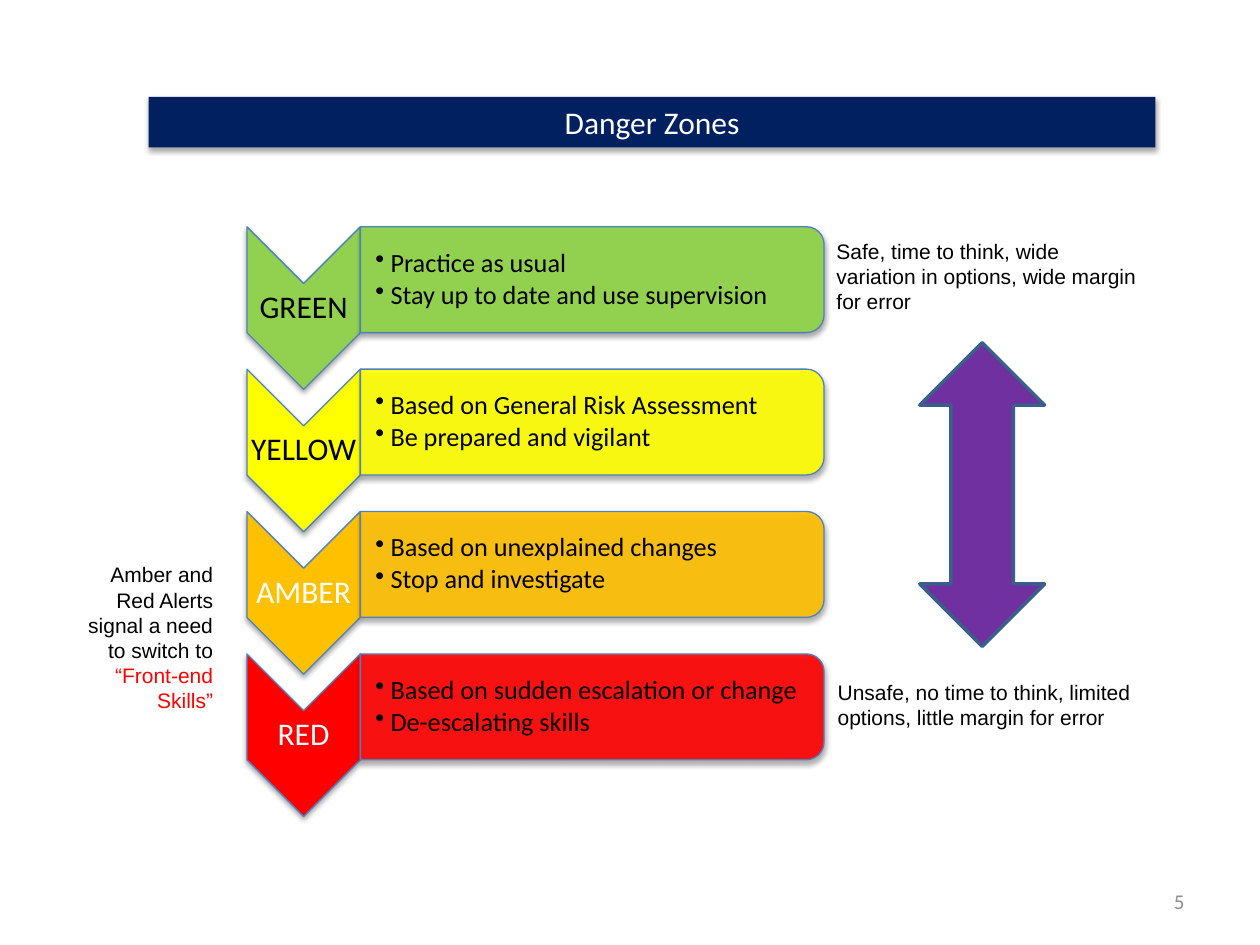
from lxml import etree
from pptx import Presentation
from pptx.dml.color import RGBColor
from pptx.enum.shapes import MSO_SHAPE
from pptx.enum.text import MSO_ANCHOR, PP_ALIGN
from pptx.oxml.ns import qn
from pptx.util import Inches, Pt

RECT, CHEVRON = MSO_SHAPE.RECTANGLE, MSO_SHAPE.CHEVRON
PANEL, ARROW = MSO_SHAPE.ROUND_2_SAME_RECTANGLE, MSO_SHAPE.UP_DOWN_ARROW
TOP, MIDDLE = MSO_ANCHOR.TOP, MSO_ANCHOR.MIDDLE
LEFT, CENTER, RIGHT = PP_ALIGN.LEFT, PP_ALIGN.CENTER, PP_ALIGN.RIGHT

BLACK = RGBColor(0x00, 0x00, 0x00)
WHITE = RGBColor(0xFF, 0xFF, 0xFF)
GRAY = RGBColor(0x8C, 0x8C, 0x8C)
NAVY = RGBColor(0x00, 0x20, 0x60)
BLUE = RGBColor(0x4F, 0x81, 0xBD)
STEEL = RGBColor(0x3A, 0x5F, 0x8C)
PURPLE = RGBColor(0x70, 0x30, 0xA0)
GREEN = RGBColor(0x92, 0xD0, 0x50)
YELLOW = RGBColor(0xFF, 0xFF, 0x00)
AMBER = RGBColor(0xFF, 0xC0, 0x00)
RED = RGBColor(0xFF, 0x00, 0x00)

# Content: label, fill, label colour, panel opacity in percent, bullets
TITLE = "Danger Zones"
PAGE_NUMBER = "5"
ZONES = [
    ("GREEN", GREEN, BLACK, 100,
     ["Practice as usual", "Stay up to date and use supervision"]),
    ("YELLOW", YELLOW, BLACK, 90,
     ["Based on General Risk Assessment", "Be prepared and vigilant"]),
    ("AMBER", AMBER, WHITE, 90,
     ["Based on unexplained changes", "Stop and investigate"]),
    ("RED", RED, WHITE, 90,
     ["Based on sudden escalation or change", "De-escalating skills"]),
]
# Notes: frame, alignment, coloured spans
NOTES = [
    ((0.58, 4.41, 1.21, 1.88), RIGHT,
     [("Amber and Red Alerts signal a need to switch to ", BLACK),
      ("“Front-end Skills”", RED)]),
    ((6.54, 1.84, 2.62, 0.71), LEFT,
     [("Safe, time to think, wide variation in options, "
       "wide margin for error", BLACK)]),
    ((6.55, 5.34, 2.62, 0.88), LEFT,
     [("Unsafe, no time to think, limited options, "
       "little margin for error", BLACK)]),
]

# Zone layout
ZONE_TOP, ZONE_PITCH = 1.8, 1.13
CHEVRON_LEFT, CHEVRON_WIDTH, CHEVRON_HEIGHT = 1.96, 0.9, 1.29
PANEL_LEFT, PANEL_WIDTH, PANEL_HEIGHT = 2.86, 3.68, 0.84


def add_shadow(shape):
    effects = etree.SubElement(shape._element.spPr, qn("a:effectLst"))
    shadow = etree.SubElement(effects, qn("a:outerShdw"), blurRad="40000",
                              dist="23000", dir="5400000", rotWithShape="0")
    color = etree.SubElement(shadow, qn("a:srgbClr"), val="000000")
    etree.SubElement(color, qn("a:alpha"), val="35000")


def add_block(page, kind, frame, fill, line=None, width=0.75, shadow=True):
    shape = page.shapes.add_shape(kind, *map(Inches, frame))
    shape.fill.solid()
    shape.fill.fore_color.rgb = fill
    if line is None:
        shape.line.fill.background()
    else:
        shape.line.color.rgb = line
        shape.line.width = Pt(width)
    if shadow:
        add_shadow(shape)
    else:
        shape.shadow.inherit = False
    return shape


def add_turned(page, kind, frame, fill):
    """Add a shape turned by 90 degrees that fills the given visible frame."""
    left, top, width, height = frame
    shift = (width - height) / 2
    shape = add_block(page, kind, (left + shift, top - shift, height, width),
                      fill, BLUE)
    shape.rotation = 90
    return shape


def set_opacity(shape, percent):
    color = shape._element.spPr.find(qn("a:solidFill"))[0]
    etree.SubElement(color, qn("a:alpha"), val=str(percent * 1000))


def write(shape, paragraphs, size, font="Calibri", align=LEFT, anchor=TOP,
          insets=(0.1, 0.05, 0.1, 0.05)):
    """Fill a shape with paragraphs, each a list of (text, colour) spans."""
    frame = shape.text_frame
    frame.word_wrap = True
    frame.vertical_anchor = anchor
    (frame.margin_left, frame.margin_top,
     frame.margin_right, frame.margin_bottom) = map(Inches, insets)
    for index, spans in enumerate(paragraphs):
        para = frame.add_paragraph() if index else frame.paragraphs[0]
        para.alignment = align
        para.font.size = Pt(size)
        para.font.name = font
        for text, color in spans:
            span = para.add_run()
            span.text = text
            span.font.color.rgb = color
    return frame.paragraphs


def add_text(page, frame, paragraphs, size, **options):
    box = page.shapes.add_textbox(*map(Inches, frame))
    return write(box, paragraphs, size, **options)


def add_bullet(para):
    props = para._p.get_or_add_pPr()
    props.set("marL", str(Inches(0.12)))
    props.set("indent", str(-Inches(0.12)))
    etree.SubElement(props, qn("a:buChar"), char="•")
    # Bullets come before the default run properties
    defaults = props.find(qn("a:defRPr"))
    if defaults is not None:
        props.append(defaults)


def add_zone(page, top, label, fill, label_color, opacity, bullets):
    add_turned(page, CHEVRON,
               (CHEVRON_LEFT, top, CHEVRON_WIDTH, CHEVRON_HEIGHT), fill)
    label_frame = (CHEVRON_LEFT, top + CHEVRON_WIDTH / 2, CHEVRON_WIDTH, 0.39)
    for para in add_text(page, label_frame, [[(label, label_color)]], 18,
                         align=CENTER, anchor=MIDDLE, insets=(0.01,) * 4):
        para.line_spacing = 0.9

    panel = add_turned(page, PANEL,
                       (PANEL_LEFT, top, PANEL_WIDTH, PANEL_HEIGHT), fill)
    if opacity < 100:
        set_opacity(panel, opacity)
    text_frame = (PANEL_LEFT, top + 0.04, PANEL_WIDTH - 0.04,
                  PANEL_HEIGHT - 0.08)
    for para in add_text(page, text_frame, [[(item, BLACK)] for item in bullets],
                         15, anchor=MIDDLE, insets=(0.12, 0.01, 0.01, 0.01)):
        para.line_spacing = 0.9
        para.space_after = Pt(2)
        add_bullet(para)


def main():
    deck = Presentation()
    deck.slide_width, deck.slide_height = Inches(10), Inches(7.5)
    page = deck.slides.add_slide(deck.slide_layouts[6])

    # Page number and title bar
    add_text(page, (7.17, 6.95, 2.33, 0.4), [[(PAGE_NUMBER, GRAY)]], 12,
             align=RIGHT, anchor=MIDDLE)
    bar = add_block(page, RECT, (1.18, 0.77, 7.99, 0.4), NAVY)
    write(bar, [[(TITLE, WHITE)]], 18, align=CENTER)

    # Zones from safe to unsafe
    for index, zone in enumerate(ZONES):
        add_zone(page, ZONE_TOP + index * ZONE_PITCH, *zone)

    # Side notes and the arrow between them
    for frame, align, spans in NOTES:
        add_text(page, frame, [spans], 12, font="Arial", align=align)
    add_block(page, ARROW, (7.3, 2.72, 0.99, 2.41), PURPLE, STEEL, 2,
              shadow=False)

    deck.save("out.pptx")


if __name__ == "__main__":
    main()
